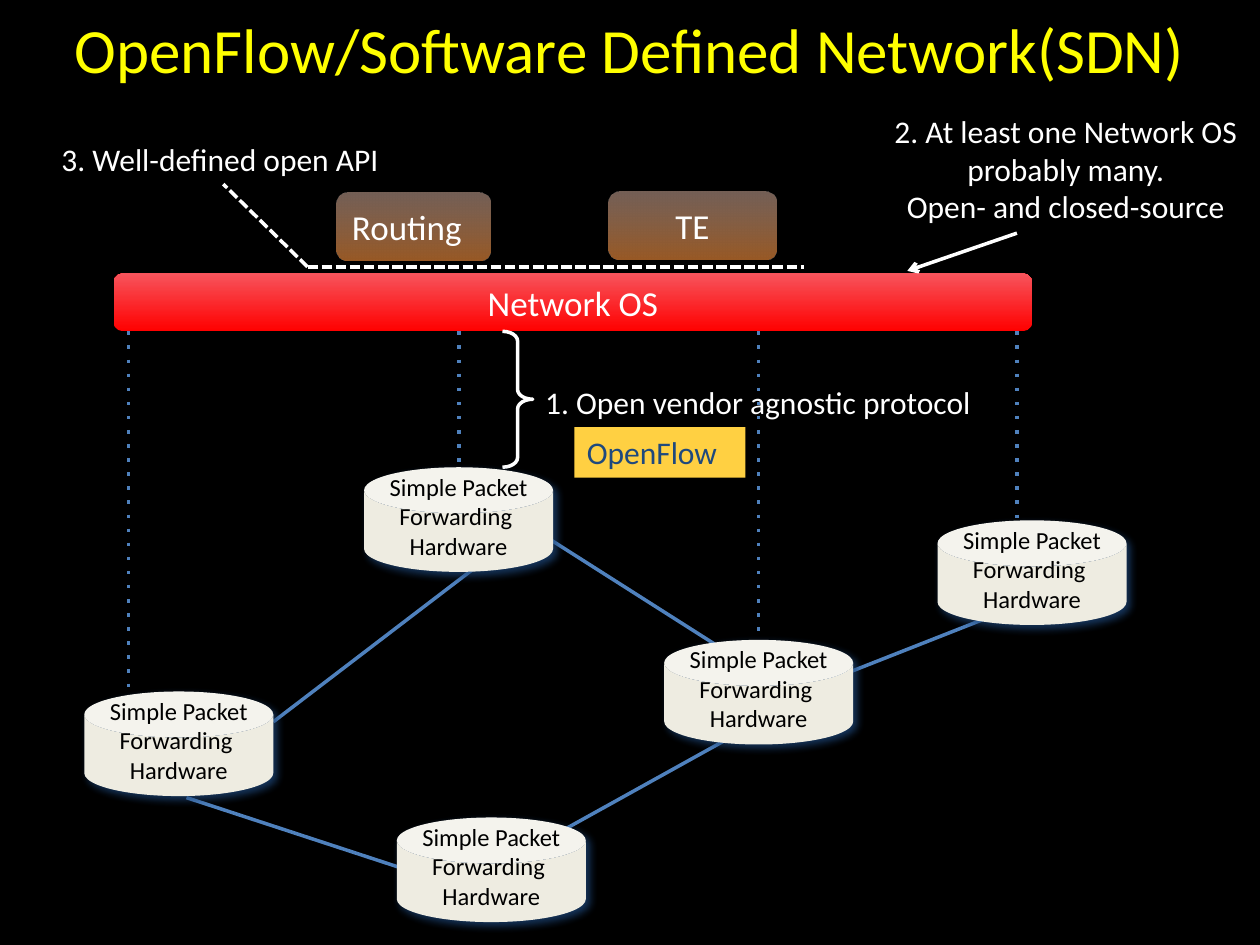
"""Build a slide on the layers of an OpenFlow software defined network."""
from dataclasses import dataclass
from typing import NamedTuple, Optional

from lxml import etree
from pptx import Presentation
from pptx.dml.color import RGBColor
from pptx.enum import shapes, text
from pptx.oxml.ns import qn
from pptx.util import Cm, Pt


@dataclass(frozen=True)
class Theme:
    font: str = "Calibri"
    background: str = "000000"
    title: str = "FFFF00"
    light: str = "FFFFFF"
    dark: str = "000000"
    link: str = "4F81BD"
    hardware: str = "EEECE1"
    navy: str = "1F497D"
    label: str = "FFD042"
    title_size: int = 36
    layer_size: int = 20
    note_size: int = 18
    hardware_size: int = 14
    line_width: int = 2


class Box(NamedTuple):
    left: float
    top: float
    width: float
    height: float


class Stop(NamedTuple):
    color: str
    opacity: int = 100


class Layer(NamedTuple):
    label: str
    box: Box
    stops: tuple
    align: text.PP_ALIGN = text.PP_ALIGN.CENTER


class Line(NamedTuple):
    start: tuple
    end: tuple
    color: str
    dash: Optional[str] = None
    arrow: bool = False


class Note(NamedTuple):
    lines: tuple
    box: Box
    color: str
    align: text.PP_ALIGN = text.PP_ALIGN.LEFT
    wrap: bool = False
    fill: Optional[str] = None


THEME = Theme()
CENTER = text.PP_ALIGN.CENTER
OS_BOTTOM = 6.68
API_CORNER = (6.2, 5.38)
APP_STOPS = (Stop("FF953E", 60), Stop("FFD2BD", 45))
OS_STOPS = (Stop("FF0000"), Stop("F7545C"))

LAYERS = (
    Layer("Routing", Box(6.78, 3.89, 3.1, 1.37), APP_STOPS, text.PP_ALIGN.LEFT),
    Layer("TE", Box(12.27, 3.86, 3.38, 1.37), APP_STOPS),
    Layer("Network OS", Box(2.29, 5.51, 18.52, 1.17), OS_STOPS),
)
LINKS = (
    ((5.51, 14.55), (10.13, 11.02)),
    ((10.72, 10.64), (14.4, 12.98)),
    ((11.02, 16.92), (15.29, 14.55)),
    ((3.76, 16.08), (8.86, 17.75)),
    ((16.51, 13.79), (20.5, 12.22)),
)
CONTROL_ENDS = ((2.59, 14.4), (9.25, 9.42), (15.29, 12.98), (20.5, 10.64))
POINTERS = (
    Line(API_CORNER, (16.21, 5.38), THEME.light, "sysDash"),
    Line(API_CORNER, (4.5, 3.71), THEME.light, "sysDash"),
    Line((20.5, 4.7), (18.29, 5.46), THEME.light, arrow=True),
)
HARDWARE_SPOTS = ((1.7, 13.94), (8, 16.48), (7.34, 9.42), (13.39, 12.9), (18.9, 10.49))
HARDWARE_LINES = ("Simple Packet", "Forwarding ", "Hardware")
NOTES = (
    Note(("3. Well-defined open API",), Box(0.99, 2.69, 6.96, 1.02), THEME.light),
    Note(("2. At least one Network OS", "probably many.", "Open- and closed-source"),
         Box(16.66, 2.13, 9.65, 2.57), THEME.light, CENTER, True),
    Note(("OpenFlow",), Box(11.58, 8.61, 3.45, 1.02), THEME.navy, wrap=True, fill=THEME.label),
    Note(("1. Open vendor agnostic protocol",), Box(10.74, 7.59, 9.19, 1.02), THEME.light),
)


def rgb(color: str) -> RGBColor:
    """Turn a hex string into a colour."""
    return RGBColor.from_string(color)


def lengths(box: Box) -> list:
    """Give the sides of a box as lengths."""
    return [Cm(value) for value in box]


def add_run(paragraph, words: str, size: int, color: str) -> None:
    """Add one formatted run to a paragraph."""
    run = paragraph.add_run()
    run.text = words
    run.font.name = THEME.font
    run.font.size = Pt(size)
    run.font.color.rgb = rgb(color)


def add_plain_shape(slide, kind: shapes.MSO_SHAPE, box: Box):
    """Add a preset shape without shadow or outline."""
    shape = slide.shapes.add_shape(kind, *lengths(box))
    shape.shadow.inherit = False
    shape.line.fill.background()
    return shape


def draw_layer(slide, layer: Layer) -> None:
    """Draw a rounded software layer with a gradient rising from its foot."""
    shape = add_plain_shape(slide, shapes.MSO_SHAPE.ROUNDED_RECTANGLE, layer.box)
    shape.fill.gradient()
    shape.fill.gradient_angle = 90
    for gradient_stop, stop in zip(shape.fill.gradient_stops, layer.stops):
        gradient_stop.color.rgb = rgb(stop.color)
    for element, stop in zip(shape._element.spPr.iter(qn("a:srgbClr")), layer.stops):
        etree.SubElement(element, qn("a:alpha"), val=str(stop.opacity * 1000))
    shape.text_frame.vertical_anchor = text.MSO_ANCHOR.MIDDLE
    paragraph = shape.text_frame.paragraphs[0]
    paragraph.alignment = layer.align
    add_run(paragraph, layer.label, THEME.layer_size, THEME.light)


def draw_line(slide, line: Line) -> None:
    """Draw a straight line with its dash and arrowhead."""
    ends = [Cm(value) for value in line.start + line.end]
    connector = slide.shapes.add_connector(shapes.MSO_CONNECTOR.STRAIGHT, *ends)
    connector.line.color.rgb = rgb(line.color)
    connector.line.width = Pt(THEME.line_width)
    properties = connector._element.spPr
    outline = properties.find(qn("a:ln"))
    if line.dash:
        etree.SubElement(outline, qn("a:prstDash"), val=line.dash)
    if line.arrow:
        etree.SubElement(outline, qn("a:tailEnd"), type="arrow")
    etree.SubElement(properties, qn("a:effectLst"))


def draw_brace(slide, box: Box) -> None:
    """Draw the brace that spans the open protocol."""
    brace = add_plain_shape(slide, shapes.MSO_SHAPE.RIGHT_BRACE, box)
    brace.adjustments[0] = 0.32
    brace.fill.background()
    brace.line.color.rgb = rgb(THEME.light)
    brace.line.width = Pt(THEME.line_width)


def draw_hardware(slide, left: float, top: float) -> None:
    """Draw a forwarding device with a soft navy shadow."""
    can = add_plain_shape(slide, shapes.MSO_SHAPE.CAN, Box(left, top, 3.81, 2.11))
    can.adjustments[0] = 0.44
    can.fill.solid()
    can.fill.fore_color.rgb = rgb(THEME.hardware)
    effects = can._element.spPr.find(qn("a:effectLst"))
    shadow = etree.SubElement(effects, qn("a:outerShdw"), blurRad=str(Pt(5)),
                              dist=str(Pt(3)), dir="2700000", algn="tl", rotWithShape="0")
    color = etree.SubElement(shadow, qn("a:srgbClr"), val=THEME.navy)
    etree.SubElement(color, qn("a:alpha"), val="75000")
    frame = can.text_frame
    frame.word_wrap = False
    frame.vertical_anchor = text.MSO_ANCHOR.MIDDLE
    frame.margin_top, frame.margin_bottom = Cm(0), Cm(0.61)
    for index, words in enumerate(HARDWARE_LINES):
        paragraph = frame.add_paragraph() if index else frame.paragraphs[0]
        paragraph.alignment = CENTER
        add_run(paragraph, words, THEME.hardware_size, THEME.dark)


def draw_note(slide, note: Note) -> None:
    """Draw a note, one line break between its lines."""
    shape = slide.shapes.add_textbox(*lengths(note.box))
    if note.fill:
        shape.fill.solid()
        shape.fill.fore_color.rgb = rgb(note.fill)
    shape.text_frame.word_wrap = note.wrap
    shape.text_frame.auto_size = text.MSO_AUTO_SIZE.SHAPE_TO_FIT_TEXT
    paragraph = shape.text_frame.paragraphs[0]
    paragraph.alignment = note.align
    for index, words in enumerate(note.lines):
        if index:
            paragraph.add_line_break()
        add_run(paragraph, words, THEME.note_size, note.color)


def set_title(slide, words: str, box: Box) -> None:
    """Place and fill the title placeholder."""
    title = slide.shapes.title
    title.left, title.top, title.width, title.height = lengths(box)
    frame = title.text_frame
    frame.auto_size = text.MSO_AUTO_SIZE.NONE
    frame.vertical_anchor = text.MSO_ANCHOR.MIDDLE
    frame.margin_top, frame.margin_bottom = Cm(0), Cm(1.52)
    frame.paragraphs[0].alignment = CENTER
    add_run(frame.paragraphs[0], words, THEME.title_size, THEME.title)


def main() -> None:
    """Build and save the presentation."""
    presentation = Presentation()
    presentation.slide_width, presentation.slide_height = Cm(25.4), Cm(19.05)
    slide = presentation.slides.add_slide(presentation.slide_layouts[5])
    slide.background.fill.solid()
    slide.background.fill.fore_color.rgb = rgb(THEME.background)
    set_title(slide, "OpenFlow/Software Defined Network(SDN)", Box(1.07, 0.71, 23.24, 2.03))
    for start, end in LINKS:
        draw_line(slide, Line(start, end, THEME.link))
    for x, bottom in CONTROL_ENDS:
        draw_line(slide, Line((x, OS_BOTTOM), (x, bottom), THEME.link, "dot"))
    for layer in LAYERS:
        draw_layer(slide, layer)
    draw_brace(slide, Box(10.13, OS_BOTTOM, 0.61, 2.74))
    for pointer in POINTERS:
        draw_line(slide, pointer)
    for left, top in HARDWARE_SPOTS:
        draw_hardware(slide, left, top)
    for note in NOTES:
        draw_note(slide, note)
    presentation.save("out.pptx")


if __name__ == "__main__":
    main()
